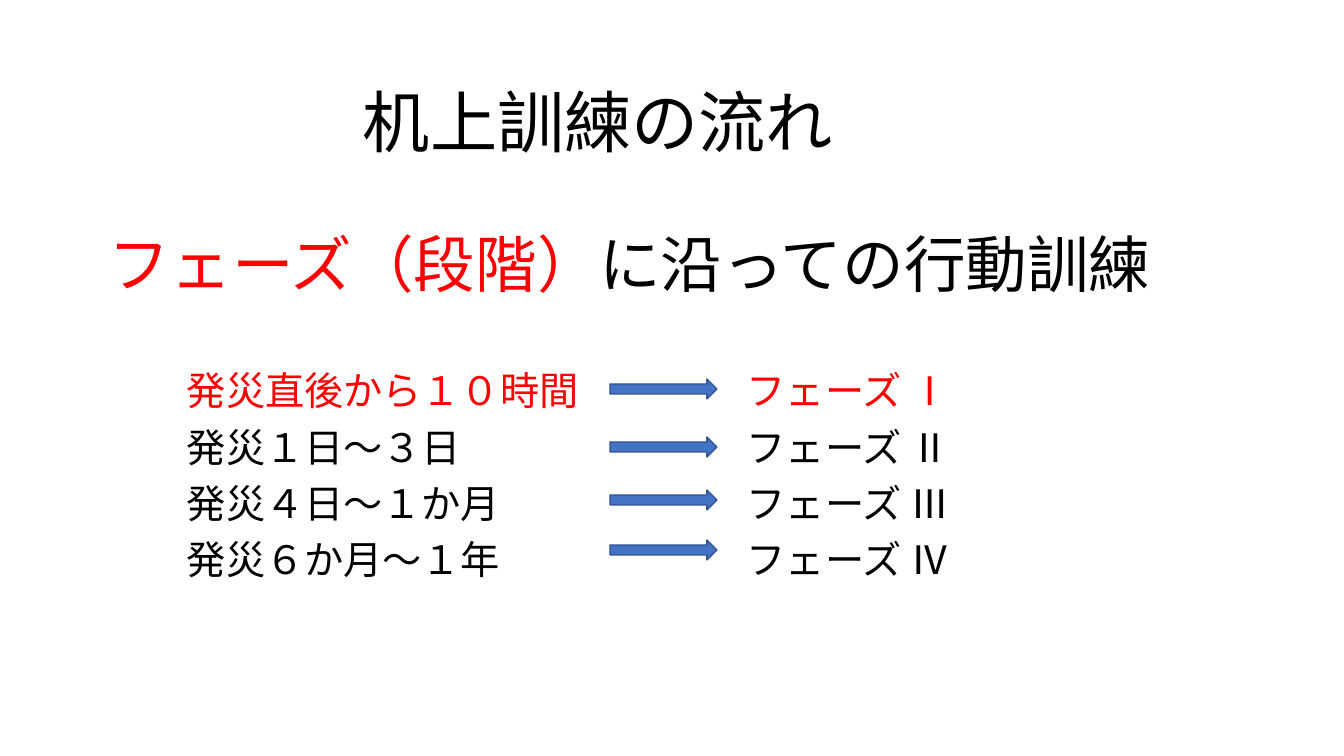
from pptx import Presentation
from pptx.dml.color import RGBColor
from pptx.enum.shapes import MSO_SHAPE as SHAPE
from pptx.enum.text import MSO_ANCHOR as ANCHOR
from pptx.oxml.ns import qn
from pptx.util import Emu, Pt
from lxml.etree import SubElement

BLACK = RGBColor(0x00, 0x00, 0x00)
RED = RGBColor(0xFF, 0x00, 0x00)
BLUE = RGBColor(0x44, 0x72, 0xC4)
DARK_BLUE = RGBColor(0x32, 0x54, 0x91)
TITLE_FONT = "Noto Sans CJK JP"
BODY_FONT = "Calibri"

# Period, phase, top of the arrow within the body
ROWS = [
    ("発災直後から１０時間", "フェーズ Ⅰ", 150),
    ("発災１日～３日", "フェーズ Ⅱ", 208),
    ("発災４日～１か月", "フェーズ Ⅲ", 261),
    ("発災６か月～１年", "フェーズ Ⅳ", 311),
]


def px(n):
    return Emu(round(n * 914400 / 100.8))


def add_text_box(slide, x, y, w, h):
    tf = slide.shapes.add_textbox(px(x), px(y), px(w), px(h)).text_frame
    tf.word_wrap = True
    return tf


def add_run(p, text, size, color, font=BODY_FONT):
    r = p.add_run()
    r.text = text
    r.font.size = Pt(size)
    r.font.color.rgb = color
    r.font.name = font
    # East Asian typeface
    SubElement(r.font._element, qn("a:ea")).set("typeface", font)


def add_row_text(p, text, index):
    p.line_spacing = 0.9
    p.space_before = Pt(10)
    add_run(p, text, 28, BLACK if index else RED)


def add_title(slide, x, y, w, h):
    tf = add_text_box(slide, x, y, w, h)
    tf.vertical_anchor = ANCHOR.MIDDLE
    p = tf.paragraphs[0]
    p.line_spacing = 0.9
    add_run(p, "机上訓練の流れ", 48, BLACK, TITLE_FONT)


def add_arrow(slide, x, y, w, h):
    sp = slide.shapes.add_shape(SHAPE.RIGHT_ARROW, px(x), px(y), px(w), px(h))
    sp.shadow.inherit = False
    sp.fill.solid()
    sp.fill.fore_color.rgb = BLUE
    sp.line.color.rgb = DARK_BLUE
    sp.line.width = Pt(1)


def add_phases(slide, x, y, w, h):
    # Headline
    periods = add_text_box(slide, x, y, w, h)
    p = periods.paragraphs[0]
    p.line_spacing = 0.9
    p.space_after = Pt(41)
    add_run(p, "フェーズ（段階）", 44, RED)
    add_run(p, "に沿っての行動訓練", 44, BLACK)

    # Periods, arrows and phases
    phases = add_text_box(slide, x + 638, y + 138, 260, 230)
    for i, (period, phase, arrow_top) in enumerate(ROWS):
        p = periods.add_paragraph()
        p._p.get_or_add_pPr().set("marL", str(px(78)))
        add_row_text(p, period, i)
        p = phases.add_paragraph() if i else phases.paragraphs[0]
        add_row_text(p, phase, i)
        add_arrow(slide, x + 511, y + arrow_top, 107, 20)


def main():
    prs = Presentation()
    prs.slide_width, prs.slide_height = px(1344), px(756)
    slide = prs.slides.add_slide(prs.slide_layouts[6])
    add_title(slide, 353, 53, 542, 146)
    add_phases(slide, 99, 229, 1131, 480)
    prs.save("out.pptx")


if __name__ == "__main__":
    main()
